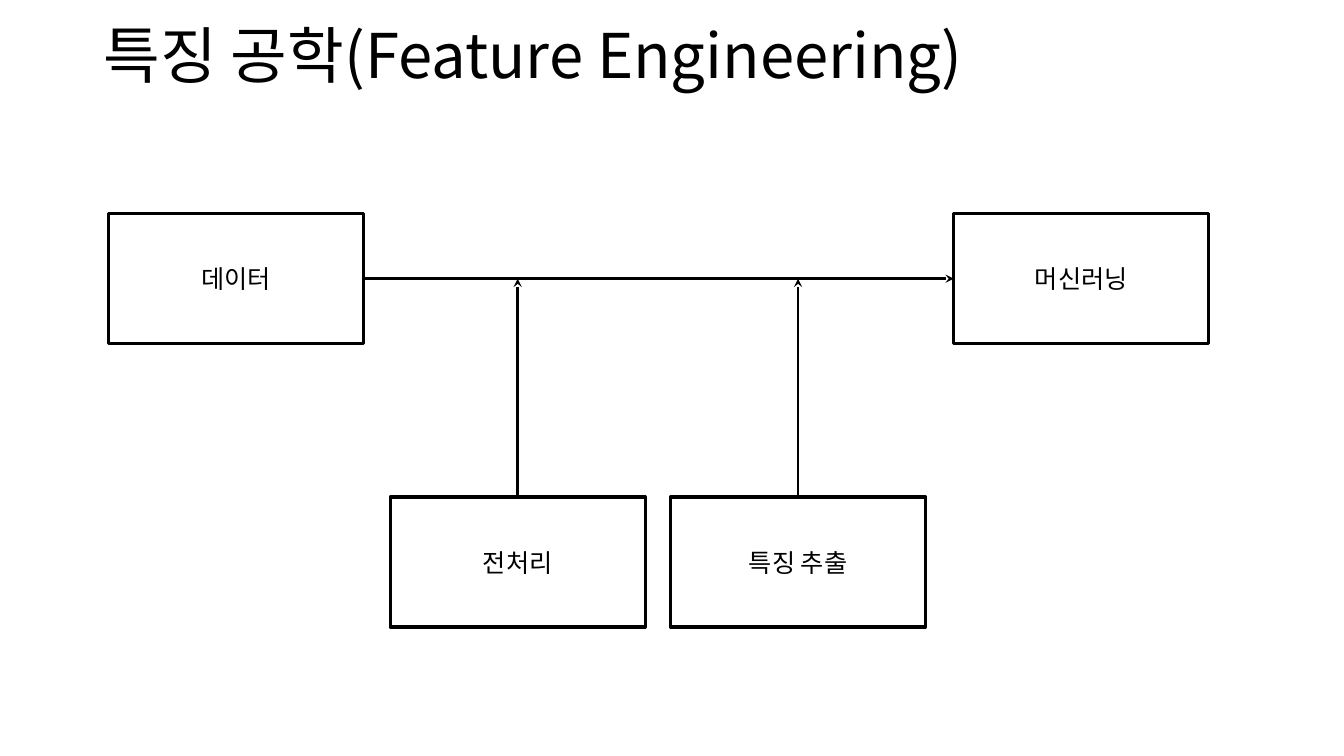
from dataclasses import dataclass
from lxml import etree
from pptx import Presentation
from pptx.dml.color import RGBColor
from pptx.enum import shapes, text
from pptx.oxml import ns
from pptx.util import Inches, Pt

TITLE = "특징 공학(Feature Engineering)"
TITLE_AT = (0.93, 0.13, 11.5, 0.91)
BOX = (2.53, 1.29)
TOP, LOW = 2.12, 4.93
ENDS = [("데이터", 1.08), ("머신러닝", 9.46)]
STEPS = [("전처리", 3.87), ("특징 추출", 6.65)]


@dataclass(frozen=True)
class Theme:
    font: str = "Noto Sans CJK KR"
    ink: RGBColor = RGBColor(0, 0, 0)
    title: float = 44
    label: float = 18
    edge: float = 2.25
    arrow: float = 2


THEME = Theme()


def write(shape, words, size, align):
    frame = shape.text_frame
    frame.word_wrap = True
    frame.vertical_anchor = text.MSO_ANCHOR.MIDDLE
    par = frame.paragraphs[0]
    par.alignment = align
    run = par.add_run()
    run.text = words
    font = run.font
    font.name, font.size = THEME.font, Pt(size)
    font.color.rgb = THEME.ink
    east = etree.SubElement(run._r.get_or_add_rPr(), ns.qn("a:ea"))
    east.set("typeface", THEME.font)
    return par


def add_box(slide, label, left, top):
    box = slide.shapes.add_shape(
        shapes.MSO_SHAPE.RECTANGLE, *map(Inches, (left, top, *BOX)))
    box.shadow.inherit = False
    box.fill.background()
    box.line.color.rgb = THEME.ink
    box.line.width = Pt(THEME.edge)
    write(box, label, THEME.label, text.PP_ALIGN.CENTER)
    return box


def add_arrow(slide, start, end):
    link = slide.shapes.add_connector(
        shapes.MSO_CONNECTOR.STRAIGHT, *map(Inches, (*start, *end)))
    link.line.color.rgb = THEME.ink
    link.line.width = Pt(THEME.arrow)
    tip = etree.SubElement(link.line._get_or_add_ln(), ns.qn("a:tailEnd"))
    tip.set("type", "stealth")
    etree.SubElement(link._element.spPr, ns.qn("a:effectLst"))
    return link


def main():
    deck = Presentation()
    deck.slide_width, deck.slide_height = Inches(13.33), Inches(7.5)
    slide = deck.slides.add_slide(deck.slide_layouts[6])

    head = slide.shapes.add_textbox(*map(Inches, TITLE_AT))
    par = write(head, TITLE, THEME.title, text.PP_ALIGN.LEFT)
    par.line_spacing = 0.9

    wide, high = BOX
    mid = TOP + high / 2
    data, model = [add_box(slide, label, left, TOP) for label, left in ENDS]
    flow = add_arrow(slide, (ENDS[0][1] + wide, mid), (ENDS[1][1], mid))
    flow.begin_connect(data, 3)
    flow.end_connect(model, 1)

    for label, left in STEPS:
        step = add_box(slide, label, left, LOW)
        axis = left + wide / 2
        add_arrow(slide, (axis, LOW), (axis, mid)).begin_connect(step, 0)

    deck.save("out.pptx")


if __name__ == "__main__":
    main()
